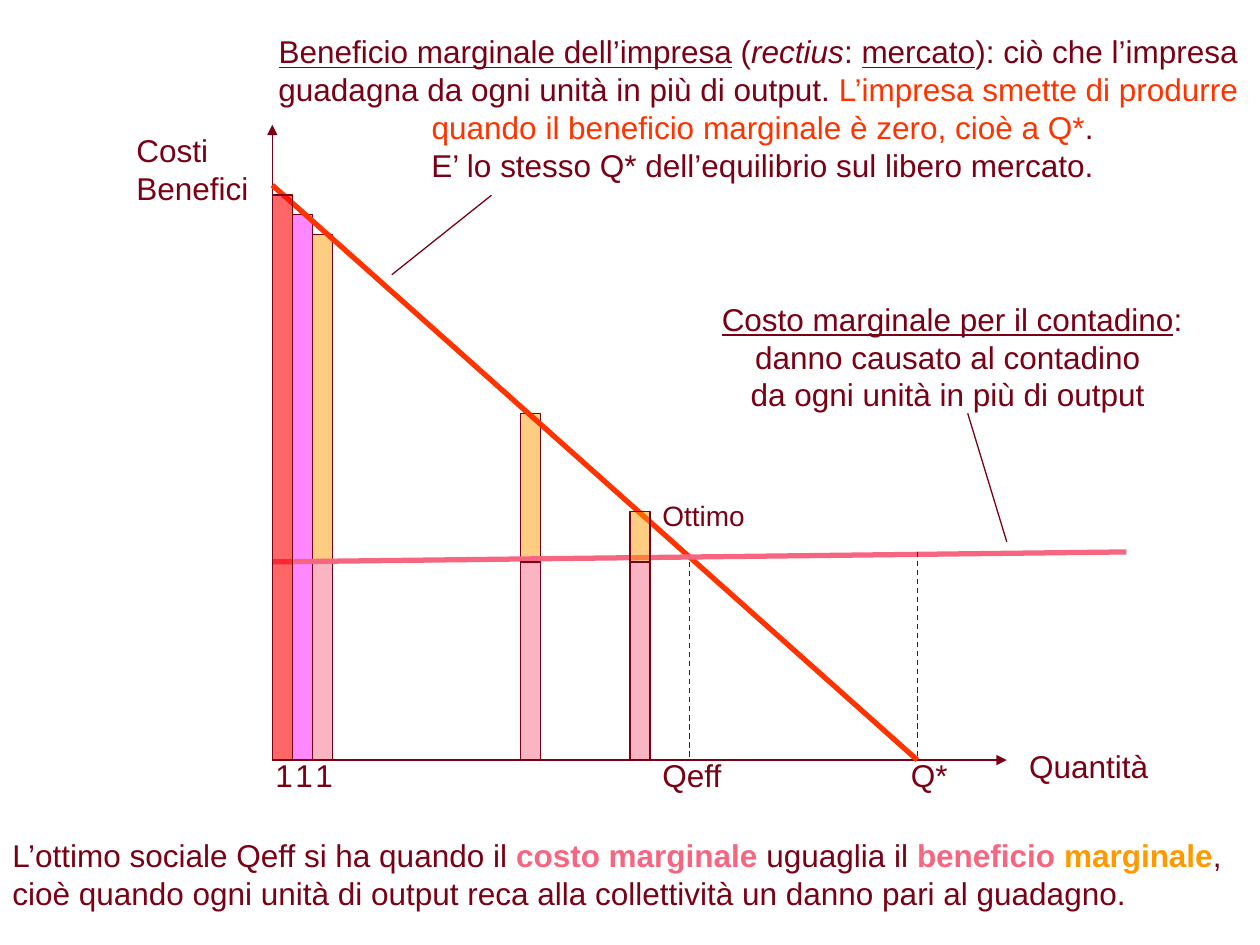
import pptx
import pptx.util
import pptx.dml.color
import pptx.enum.dml
import pptx.enum.shapes
import pptx.enum.text
import pptx.oxml.ns
import lxml.etree

Pt = pptx.util.Pt
RGBColor = pptx.dml.color.RGBColor

WINE = RGBColor(0x79, 0x00, 0x15)
SCARLET = RGBColor(0xFF, 0x33, 0x00)
ROSE = RGBColor(0xF7, 0x66, 0x81)
ORANGE = RGBColor(0xFF, 0x99, 0x00)
MAGENTA = RGBColor(0xFF, 0x00, 0xFF)
RED = RGBColor(0xFF, 0x00, 0x00)

AXIS_X, AXIS_Y = 155.6, 434.3
COST_Y = 321.1
COST_END_Y = 315.4
EFFICIENT_X, MARKET_X = 394, 524.2
BAR_WIDTH = 11.45
LABEL_Y = 428.4


def add_child(parent, tag, **attributes):
    return lxml.etree.SubElement(parent, pptx.oxml.ns.qn(tag), attributes)


def add_bar(page, left, top, bottom, color, opacity):
    bar = page.shapes.add_shape(
        pptx.enum.shapes.MSO_SHAPE.RECTANGLE,
        Pt(left), Pt(top), Pt(BAR_WIDTH), Pt(bottom - top))
    bar.shadow.inherit = False
    bar.fill.solid()
    bar.fill.fore_color.rgb = color
    fill_color = bar.fill._xPr.find(".//" + pptx.oxml.ns.qn("a:srgbClr"))
    add_child(fill_color, "a:alpha", val=str(opacity * 1000))
    bar.line.color.rgb = WINE
    bar.line.width = Pt(0.75)


def add_benefit_part(page, left, top):
    add_bar(page, left, top, COST_Y, ORANGE, 49)


def add_cost_part(page, left):
    add_bar(page, left, COST_Y, AXIS_Y, ROSE, 49)


def add_line(page, start, end, color=WINE, width=0.75, dashed=False, arrow=False):
    line = page.shapes.add_connector(
        pptx.enum.shapes.MSO_CONNECTOR.STRAIGHT,
        Pt(start[0]), Pt(start[1]), Pt(end[0]), Pt(end[1]))
    line.line.color.rgb = color
    line.line.width = Pt(width)
    if dashed:
        line.line.dash_style = pptx.enum.dml.MSO_LINE.DASH
    if arrow:
        add_child(line.line._get_or_add_ln(), "a:tailEnd", type="triangle")
    add_child(line._element.spPr, "a:effectLst")


def add_text(page, left, top, width, height, paragraphs,
             size=18, centered=False, wrap=False):
    box = page.shapes.add_textbox(Pt(left), Pt(top), Pt(width), Pt(height))
    frame = box.text_frame
    frame.word_wrap = wrap
    frame.auto_size = pptx.enum.text.MSO_AUTO_SIZE.SHAPE_TO_FIT_TEXT
    for index, pieces in enumerate(paragraphs):
        para = frame.add_paragraph() if index else frame.paragraphs[0]
        if centered:
            para.alignment = pptx.enum.text.PP_ALIGN.CENTER
        for piece in pieces:
            text, color, style = piece if isinstance(piece, tuple) else (piece, WINE, "")
            span = para.add_run()
            span.text = text
            span.font.name = "Arial"
            span.font.size = Pt(size)
            span.font.color.rgb = color
            if style == "bold":
                span.font.bold = True
            elif style == "italic":
                span.font.italic = True
            elif style == "underline":
                span.font.underline = True


def add_diagram(page):
    unit_bars = [AXIS_X + BAR_WIDTH * index for index in range(3)]
    middle_bar, last_bar = 297.4, 360
    add_benefit_part(page, unit_bars[2], 133.9)
    add_benefit_part(page, middle_bar, 236.2)
    add_cost_part(page, unit_bars[2])
    add_bar(page, unit_bars[1], 122.4, AXIS_Y, MAGENTA, 47)
    origin = (AXIS_X, AXIS_Y)
    add_line(page, origin, (AXIS_X, 71.3), arrow=True)
    add_line(page, origin, (575.3, AXIS_Y), arrow=True)
    add_line(page, (AXIS_X, 105.8), (MARKET_X, AXIS_Y), SCARLET, 3)
    add_line(page, (AXIS_X, COST_Y), (643.7, COST_END_Y), ROSE, 3)
    add_line(page, (EFFICIENT_X, COST_Y), (EFFICIENT_X, AXIS_Y), dashed=True)
    add_line(page, (MARKET_X, COST_END_Y), (MARKET_X, AXIS_Y), dashed=True)
    add_bar(page, unit_bars[0], 111.4, AXIS_Y, RED, 60)
    for left in unit_bars:
        add_text(page, left - 5.3, LABEL_Y, 24.5, 28.8, [["1"]], wrap=True)
    add_cost_part(page, middle_bar)
    add_benefit_part(page, last_bar, 292.3)
    add_cost_part(page, last_bar)


def add_labels(page):
    add_text(page, 513.4, LABEL_Y, 35.3, 28.8, [["Q*"]])
    add_text(page, 371.5, LABEL_Y, 48.2, 28.8, [["Qeff"]])
    add_text(page, 581, 423.4, 82.8, 28.8, [["Quantità"]])
    add_text(page, 70.8, 71.3, 78.5, 50.4, [["Costi"], ["Benefici"]])
    add_text(page, 371.5, 281.5, 61.9, 26.6, [["Ottimo"]], size=16)


def add_explanations(page):
    add_line(page, (223.9, 157), (280.8, 111.6))
    add_text(page, 148, 15, 575.6, 94.3, [
        [("Beneficio marginale dell’impresa", WINE, "underline"), " (",
         ("rectius", WINE, "italic"), ": ", ("mercato", WINE, "underline"),
         "): ciò che l’impresa "],
        ["guadagna da ogni unità in più di output. ",
         ("L’impresa smette di produrre ", SCARLET, "")],
        [("quando il beneficio marginale è zero, cioè a Q*", SCARLET, ""), "."],
        ["E’ lo stesso Q* dell’equilibrio sul libero mercato."],
    ], centered=True)
    add_line(page, (575.3, 309.6), (553, 236.2))
    add_text(page, 402, 167.8, 284, 72, [
        [("Costo marginale per il contadino", WINE, "underline"), ":"],
        ["danno causato al contadino "],
        ["da ogni unità in più di output "],
    ], centered=True)
    add_text(page, 0, 474.3, 720, 50.4, [
        ["L’ottimo sociale Qeff si ha quando il ", ("costo marginale", ROSE, "bold"),
         " uguaglia il ", ("beneficio ", ROSE, "bold"),
         ("marginale", ORANGE, "bold"), ","],
        ["cioè quando ogni unità di output reca alla collettività un danno pari al guadagno."],
    ], wrap=True)


def main():
    deck = pptx.Presentation()
    deck.slide_width = Pt(720)
    deck.slide_height = Pt(540)
    page = deck.slides.add_slide(deck.slide_layouts[6])
    add_diagram(page)
    add_labels(page)
    add_explanations(page)
    deck.save("out.pptx")


if __name__ == "__main__":
    main()
